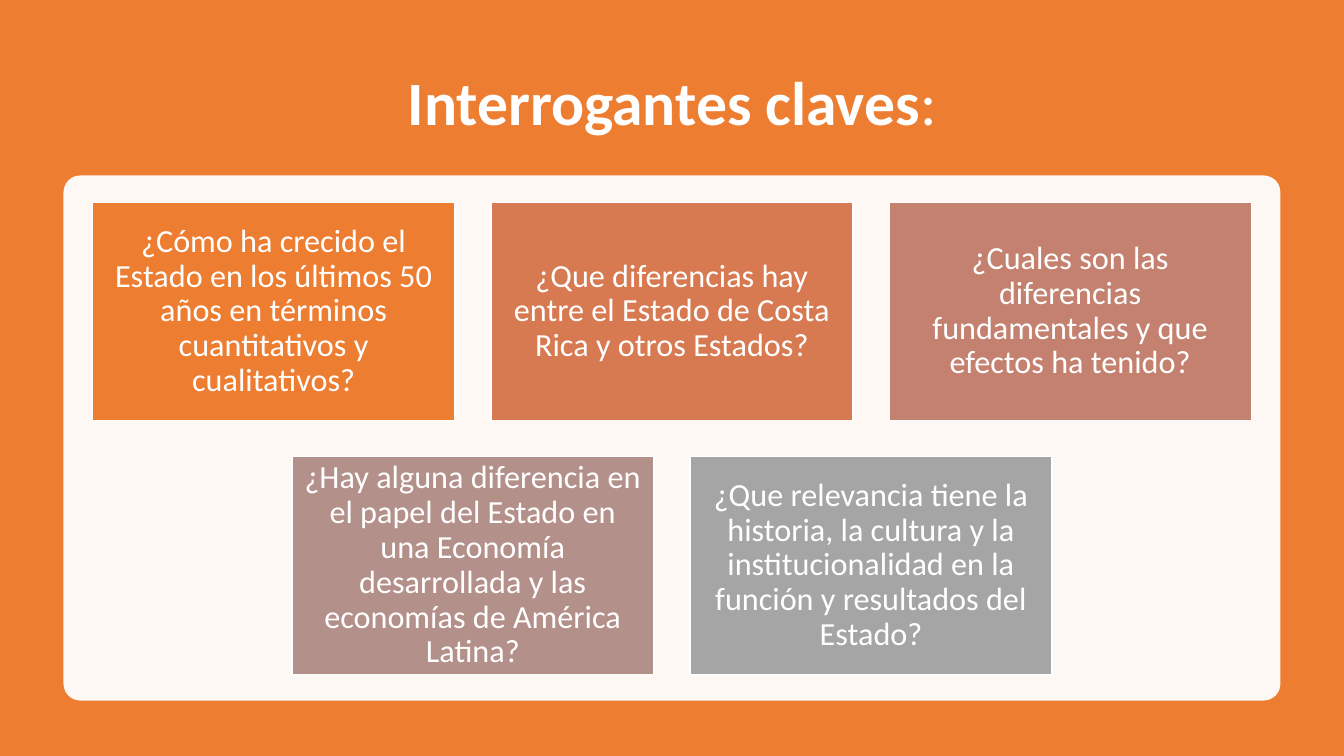
from dataclasses import dataclass

from lxml.etree import SubElement
from pptx import Presentation
from pptx.dml.color import RGBColor
from pptx.enum.shapes import MSO_SHAPE
from pptx.enum.text import MSO_ANCHOR, PP_ALIGN
from pptx.oxml.ns import qn
from pptx.util import Inches, Pt


@dataclass(frozen=True)
class Theme:
    font: str = "Calibri"
    title_size: int = 44
    question_size: int = 23
    line_spacing: float = 0.9
    orange: str = "ED7D31"
    white: str = "FFFFFF"
    card_fills: tuple = ("ED7D31", "D87A51", "C48170", "B4908B", "A5A5A5")


SLIDE_WIDTH, SLIDE_HEIGHT = 13.33, 7.5
CARD_WIDTH, CARD_HEIGHT, CARD_GAP = 3.59, 2.16, 0.36
CARDS_TOP = 2.01
CARDS_PER_ROW = 3

QUESTIONS = [
    "¿Cómo ha crecido el Estado en los últimos 50 años en términos cuantitativos y cualitativos?",
    "¿Que diferencias hay entre el Estado de Costa Rica y otros Estados?",
    "¿Cuales son las diferencias fundamentales y que efectos ha tenido?",
    "¿Hay alguna diferencia en el papel del Estado en una Economía desarrollada "
    "y las economías de América Latina?",
    "¿Que relevancia tiene la historia, la cultura y la institucionalidad "
    "en la función y resultados del Estado?",
]


class SlideBuilder:
    def __init__(self, slide, theme):
        self.slide = slide
        self.theme = theme

    def background(self, color):
        fill = self.slide.background.fill
        fill.solid()
        fill.fore_color.rgb = RGBColor.from_string(color)

    def format_paragraph(self, paragraph, size):
        paragraph.alignment = PP_ALIGN.CENTER
        paragraph.line_spacing = self.theme.line_spacing
        paragraph.font.name = self.theme.font
        paragraph.font.size = Pt(size)
        paragraph.font.color.rgb = RGBColor.from_string(self.theme.white)

    def title(self, words, ending, left, top, width, height):
        """Fill the title placeholder with bold words and a regular ending."""
        heading = self.slide.shapes.title
        heading.left, heading.top = Inches(left), Inches(top)
        heading.width, heading.height = Inches(width), Inches(height)
        heading.text_frame.vertical_anchor = MSO_ANCHOR.MIDDLE
        paragraph = heading.text_frame.paragraphs[0]
        for text, bold in ((words, True), (ending, False)):
            run = paragraph.add_run()
            run.text = text
            run.font.bold = bold
        self.format_paragraph(paragraph, self.theme.title_size)

    def box(self, preset, color, left, top, width, height):
        shape = self.slide.shapes.add_shape(
            preset, Inches(left), Inches(top), Inches(width), Inches(height))
        shape.shadow.inherit = False
        shape.fill.solid()
        shape.fill.fore_color.rgb = RGBColor.from_string(color)
        shape.line.fill.background()
        return shape

    def panel(self, left, top, width, height, corner, opacity):
        """Add a translucent white panel; opacity is a percentage."""
        panel = self.box(MSO_SHAPE.ROUNDED_RECTANGLE, self.theme.white,
                         left, top, width, height)
        panel.adjustments[0] = corner
        color = panel.fill._xPr.find(qn("a:solidFill"))[0]
        SubElement(color, qn("a:alpha"), val=str(opacity * 1000))

    def card(self, question, color, left, top):
        card = self.box(MSO_SHAPE.RECTANGLE, color, left, top, CARD_WIDTH, CARD_HEIGHT)
        card.line.color.rgb = RGBColor.from_string(self.theme.white)
        card.line.width = Pt(1)
        frame = card.text_frame
        frame.word_wrap = True
        frame.vertical_anchor = MSO_ANCHOR.MIDDLE
        frame.margin_left = frame.margin_right = Inches(0.1)
        frame.margin_top = frame.margin_bottom = Inches(0.1)
        frame.text = question
        self.format_paragraph(frame.paragraphs[0], self.theme.question_size)

    def card_grid(self, questions):
        """Lay the cards out in rows, each row centred on the slide."""
        for index, question in enumerate(questions):
            row, column = divmod(index, CARDS_PER_ROW)
            row_count = min(CARDS_PER_ROW, len(questions) - row * CARDS_PER_ROW)
            row_width = row_count * CARD_WIDTH + (row_count - 1) * CARD_GAP
            left = (SLIDE_WIDTH - row_width) / 2 + column * (CARD_WIDTH + CARD_GAP)
            top = CARDS_TOP + row * (CARD_HEIGHT + CARD_GAP)
            self.card(question, self.theme.card_fills[index], left, top)


def main():
    presentation = Presentation()
    presentation.slide_width = Inches(SLIDE_WIDTH)
    presentation.slide_height = Inches(SLIDE_HEIGHT)
    title_only = presentation.slide_layouts[5]
    theme = Theme()
    builder = SlideBuilder(presentation.slides.add_slide(title_only), theme)
    builder.background(theme.orange)
    builder.title("Interrogantes claves", ":", 0.92, 0.5, 11.5, 1.1)
    builder.panel(0.63, 1.74, 12.07, 5.21, corner=0.032, opacity=95)
    builder.card_grid(QUESTIONS)
    presentation.save("out.pptx")


if __name__ == "__main__":
    main()
